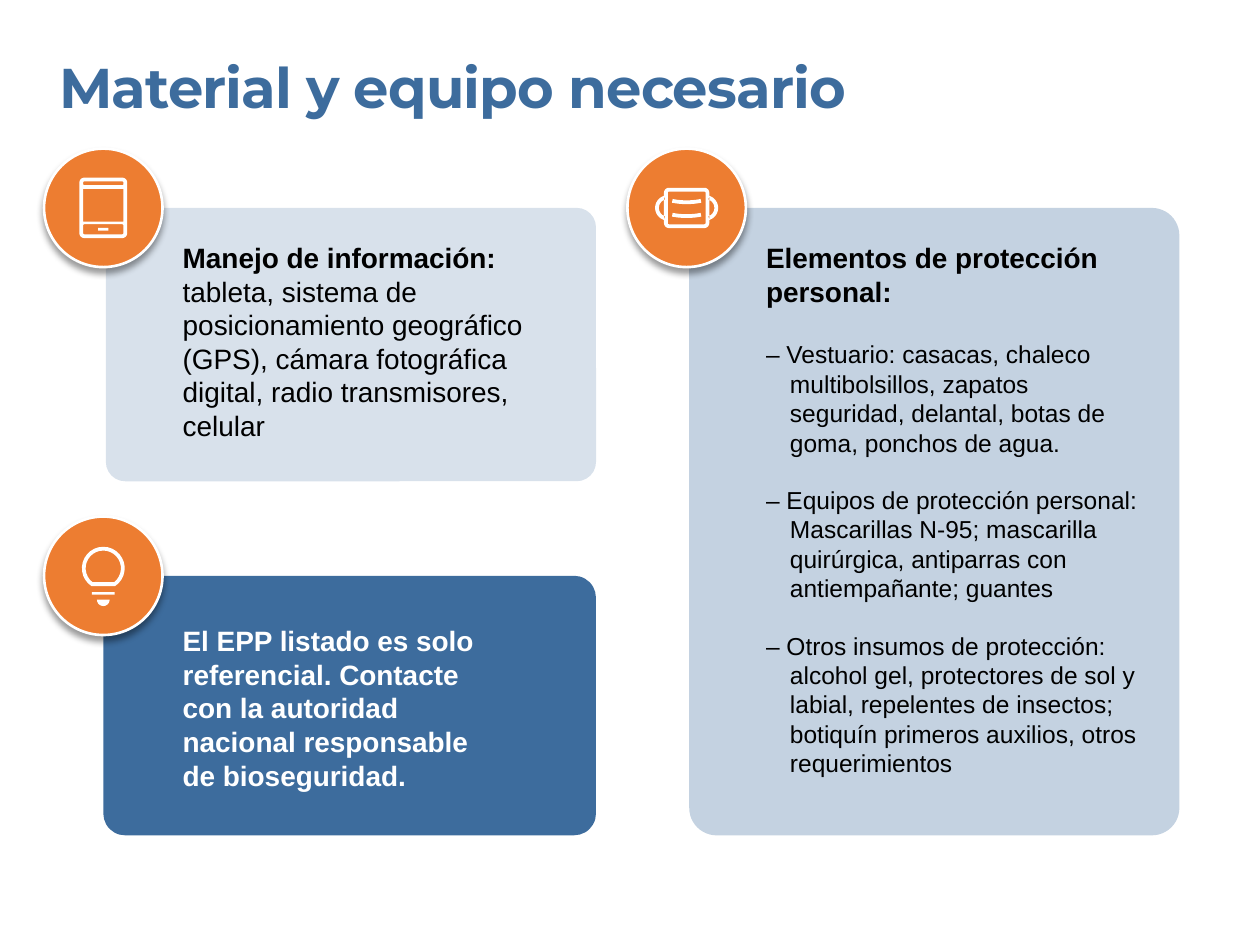
from dataclasses import dataclass
from math import cos, radians, sin

from lxml.etree import SubElement
from pptx import Presentation
from pptx.dml.color import RGBColor
from pptx.enum.shapes import MSO_SHAPE as Shape
from pptx.enum.text import MSO_ANCHOR, MSO_AUTO_SIZE, PP_ALIGN
from pptx.oxml.ns import qn
from pptx.util import Pt

PX = 9144  # EMU in one px, at 100 px to the inch


@dataclass(frozen=True)
class Theme:
    blue: str = "3D6C9D"
    orange: str = "ED7D31"
    white: str = "FFFFFF"
    black: str = "000000"
    title_font: str = "Montserrat"
    body_font: str = "Arial"
    title_size: int = 32
    body_size: int = 16
    list_size: int = 14


THEME = Theme()
BADGE = 94
HANGING = 19

TITLE = "Material y equipo necesario"
SUPPLIES = [
    "– Vestuario: casacas, chaleco multibolsillos, zapatos seguridad, delantal, "
    "botas de goma, ponchos de agua.",
    "– Equipos de protección personal: Mascarillas N-95; mascarilla quirúrgica, "
    "antiparras con antiempañante; guantes",
    "– Otros insumos de protección: alcohol gel, protectores de sol y labial, "
    "repelentes de insectos; botiquín primeros auxilios, otros requerimientos",
]
# Boxes are left, top, width, height; badge is the left and top of the circle.
CARDS = [
    dict(box=(84, 165, 389, 217), radius=0.071, opacity=20, text_box=(145, 191, 311, 162),
         color=THEME.black, heading="Manejo de información:",
         rest=" tableta, sistema de posicionamiento geográfico (GPS), cámara fotográfica "
              "digital, radio transmisores, celular",
         items=[], badge=(35, 118), icon="tablet"),
    dict(box=(547, 165, 389, 498), radius=0.056, opacity=30, text_box=(608, 191, 303, 434),
         color=THEME.black, heading="Elementos de protección personal:", rest="",
         items=SUPPLIES, badge=(498, 118), icon="mask"),
    dict(box=(82, 457, 391, 206), radius=0.084, opacity=100, text_box=(145, 495, 244, 135),
         color=THEME.white,
         heading="El EPP listado es solo referencial. Contacte con la autoridad nacional "
                 "responsable de bioseguridad.",
         rest="", items=[], badge=(35, 410), icon="bulb"),
]


def arc(x, y, radius, start, end, steps=24):
    """Points along a circle; angles run clockwise from the right."""
    angles = [radians(start + (end - start) * i / steps) for i in range(steps + 1)]
    return [(x + radius * cos(a), y + radius * sin(a)) for a in angles]


def band(x, y, outer, inner, start, end):
    return arc(x, y, outer, start, end) + arc(x, y, inner, end, start)


def rectangle(left, top, right, bottom, radius=0):
    corners = [(left + radius, top + radius, 180), (right - radius, top + radius, 270),
               (right - radius, bottom - radius, 0), (left + radius, bottom - radius, 90)]
    return [point for x, y, angle in corners
            for point in arc(x, y, radius, angle, angle + 90, 6 if radius else 1)]


# Outlines in px from the centre of the badge; an outline inside another is a hole.
ICONS = {
    "tablet": [
        rectangle(-19, -24, 19, 24, 4),
        rectangle(-16, -21, 16, -18, 1),
        rectangle(-16, -15, 16, 11),
        rectangle(-16, 13, 16, 21, 1),
        rectangle(-4, 16, 4, 18),
    ],
    "mask": [
        rectangle(-18, -16, 18, 16, 4),
        rectangle(-15, -13, 15, 13, 1),
        band(-15, 0, 10, 7, 108, 252),
        band(15, 0, 10, 7, -72, 72),
        band(0, -53, 61, 58, 79, 101),
        band(0, -64, 61, 58, 79, 101),
    ],
    "bulb": [
        arc(0, -6, 17, 123, 417),
        arc(0, -6, 14, 128, 412),
        rectangle(-9, 13, 9, 15),
        arc(0, 19, 5, 0, 180),
    ],
}


def emu(*lengths):
    return [round(length * PX) for length in lengths]


def paint(shape, color, line=None):
    shape.shadow.inherit = False
    shape.fill.solid()
    shape.fill.fore_color.rgb = RGBColor.from_string(color)
    if line:
        shape.line.color.rgb = RGBColor.from_string(line)
        shape.line.width = Pt(1.5)
    else:
        shape.line.fill.background()


def set_alpha(color_element, percent):
    SubElement(color_element, qn("a:alpha"), val=str(percent * 1000))


def add_card(slide, box, radius, opacity):
    card = slide.shapes.add_shape(Shape.ROUNDED_RECTANGLE, *emu(*box))
    card.adjustments[0] = radius
    paint(card, THEME.blue)
    if opacity < 100:
        set_alpha(card.element.spPr.find(".//" + qn("a:srgbClr")), opacity)


def add_badge(slide, left, top):
    circle = slide.shapes.add_shape(Shape.OVAL, *emu(left, top, BADGE, BADGE))
    paint(circle, THEME.orange, line=THEME.white)
    effects = circle.element.spPr.find(qn("a:effectLst"))
    shadow = SubElement(effects, qn("a:outerShdw"), blurRad=str(Pt(4)), dist=str(Pt(3)),
                        dir="5400000", algn="t", rotWithShape="0")
    set_alpha(SubElement(shadow, qn("a:srgbClr"), val=THEME.black), 40)


def add_icon(slide, outlines, center_x, center_y):
    outlines = [[emu(center_x + x, center_y + y) for x, y in outline] for outline in outlines]
    builder = slide.shapes.build_freeform(*outlines[0][0], scale=1.0)
    for index, outline in enumerate(outlines):
        if index:
            builder.move_to(*outline[0])
        builder.add_line_segments(outline[1:], close=True)
    paint(builder.convert_to_shape(), THEME.white)


def add_text_frame(slide, box):
    frame = slide.shapes.add_textbox(*emu(*box)).text_frame
    frame.margin_left = frame.margin_right = frame.margin_top = frame.margin_bottom = 0
    frame.word_wrap = True
    frame.auto_size = MSO_AUTO_SIZE.SHAPE_TO_FIT_TEXT
    frame.vertical_anchor = MSO_ANCHOR.TOP
    return frame


def write(paragraph, text, *, color, size=THEME.body_size, font=THEME.body_font,
          bold=False, spacing=0, before=0, hanging=0):
    paragraph.alignment = PP_ALIGN.LEFT
    if before:
        paragraph.space_before = Pt(before)
    if hanging:
        properties = paragraph._p.get_or_add_pPr()
        properties.set("marL", str(hanging * PX))
        properties.set("indent", str(-hanging * PX))
    run = paragraph.add_run()
    run.text = text
    run.font.name, run.font.size, run.font.bold = font, Pt(size), bold
    run.font.color.rgb = RGBColor.from_string(color)
    if spacing:
        run._r.get_or_add_rPr().set("spc", str(round(spacing * 100)))


def add_card_text(slide, card):
    frame = add_text_frame(slide, card["text_box"])
    first = frame.paragraphs[0]
    write(first, card["heading"], color=card["color"], bold=True)
    if card["rest"]:
        write(first, card["rest"], color=card["color"])
    for index, item in enumerate(card["items"]):
        write(frame.add_paragraph(), item, color=card["color"], size=THEME.list_size,
              before=16 if index else 18, hanging=HANGING)


def main():
    presentation = Presentation()
    presentation.slide_width, presentation.slide_height = emu(1000, 750)
    slide = presentation.slides.add_slide(presentation.slide_layouts[6])

    title = add_text_frame(slide, (47, 42, 855, 54))
    write(title.paragraphs[0], TITLE, color=THEME.blue, size=THEME.title_size,
          font=THEME.title_font, bold=True, spacing=-0.5)
    for card in CARDS:
        left, top = card["badge"]
        add_card(slide, card["box"], card["radius"], card["opacity"])
        add_card_text(slide, card)
        add_badge(slide, left, top)
        add_icon(slide, ICONS[card["icon"]], left + BADGE / 2, top + BADGE / 2)
    presentation.save("out.pptx")


if __name__ == "__main__":
    main()
